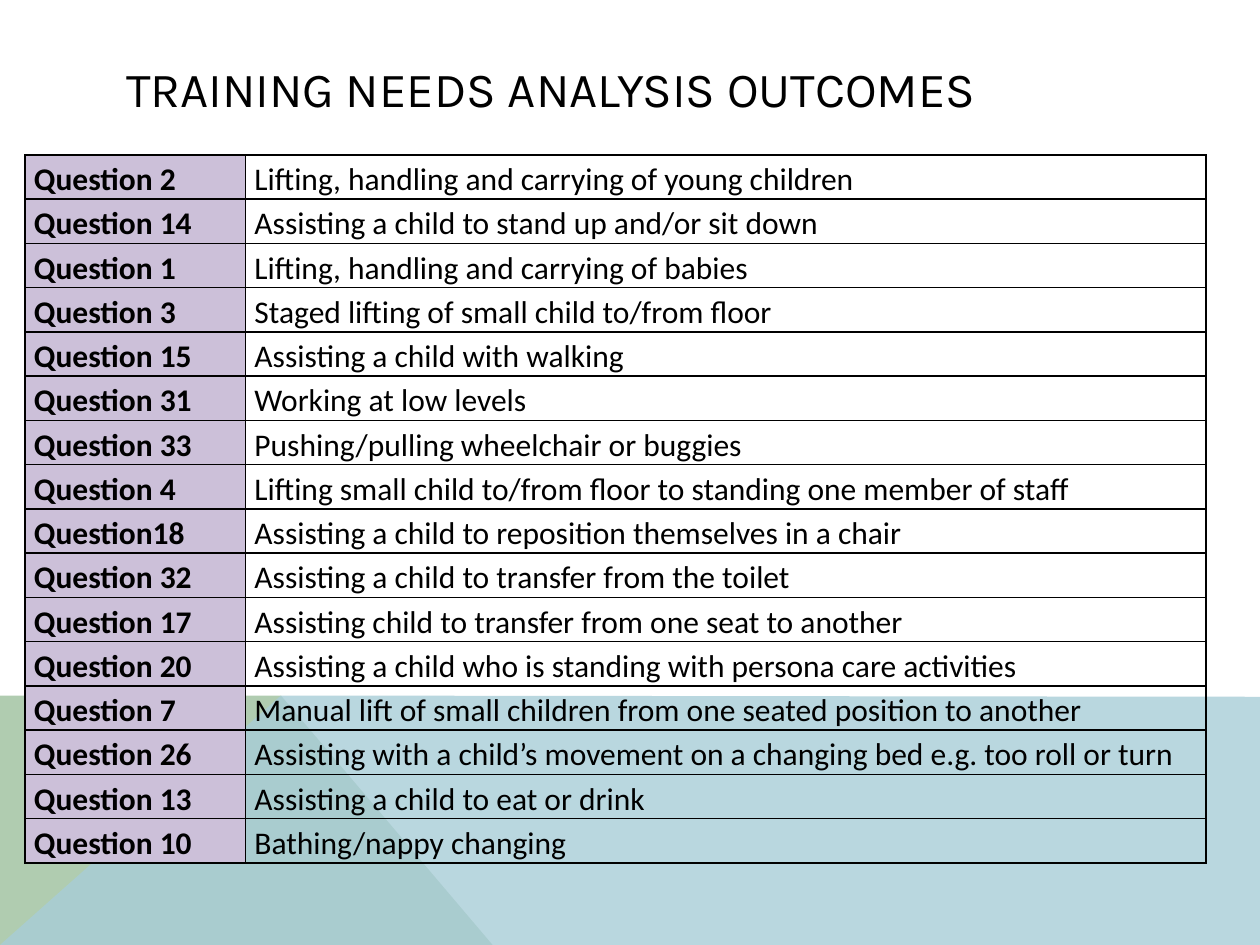
from lxml import etree
from pptx import Presentation
from pptx.dml.color import RGBColor
from pptx.enum import text
from pptx.oxml.ns import qn
from pptx.util import Inches, Pt

THEME = {
    "ink": RGBColor.from_string("000000"),
    "green": RGBColor.from_string("B0CCB0"),
    "blue": RGBColor.from_string("A8CDD7"),
    "lilac": RGBColor.from_string("CCC0D9"),
    "title_font": "Karla",
    "title_size": Pt(28),
    "table_font": "Calibri",
    "table_size": Pt(18),
}

OUTCOMES = [
    ("Question 2", "Lifting, handling and carrying of young children"),
    ("Question 14", "Assisting a child to stand up and/or sit down"),
    ("Question 1", "Lifting, handling and carrying of babies"),
    ("Question 3", "Staged lifting of small child to/from floor"),
    ("Question 15", "Assisting a child with walking"),
    ("Question 31", "Working at low levels"),
    ("Question 33", "Pushing/pulling wheelchair or buggies"),
    ("Question 4", "Lifting small child to/from floor to standing one member of staff"),
    ("Question18", "Assisting a child to reposition themselves in a chair"),
    ("Question 32", "Assisting a child to transfer from the toilet"),
    ("Question 17", "Assisting child to transfer from one seat to another"),
    ("Question 20", "Assisting a child who is standing with persona care activities"),
    ("Question 7", "Manual lift of small children from one seated position to another"),
    ("Question 26", "Assisting with a child’s movement on a changing bed e.g. too roll or turn"),
    ("Question 13", "Assisting a child to eat or drink"),
    ("Question 10", "Bathing/nappy changing"),
]


def set_all(target, values):
    for name, value in values.items():
        setattr(target, name, value)


def add_borders(cell):
    """Draw a 1 pt line on all four sides; the lines must precede the fill."""
    properties = cell._tc.get_or_add_tcPr()
    for position, side in enumerate(("a:lnL", "a:lnR", "a:lnT", "a:lnB")):
        line = etree.Element(qn(side), w=str(Pt(1)))
        fill = etree.SubElement(line, qn("a:solidFill"))
        etree.SubElement(fill, qn("a:srgbClr"), val=str(THEME["ink"]))
        properties.insert(position, line)


prs = Presentation()
set_all(prs, {"slide_width": Inches(10), "slide_height": Inches(7.5)})
slide = prs.slides.add_slide(prs.slide_layouts[5])

# Coloured bands along the foot
bands = [
    ("green", 100, [(0, 7.5), (0, 5.52), (2.23, 5.52), (3.91, 7.5)]),
    ("blue", 80, [(0, 7.5), (2.23, 5.52), (10, 5.53), (10, 7.5)]),
]
for colour, opacity, corners in bands:
    points = [(Inches(x), Inches(y)) for x, y in corners]
    outline = slide.shapes.build_freeform(*points[0])
    outline.add_line_segments(points[1:], close=True)
    band = outline.convert_to_shape()
    band.shadow.inherit = False
    band.fill.solid()
    band.fill.fore_color.rgb = THEME[colour]
    band.line.fill.background()
    if opacity < 100:
        tint = band.element.spPr.find(qn("a:solidFill"))[0]
        etree.SubElement(tint, qn("a:alpha"), val=str(opacity * 1000))

# Title, in front of the bands
title = slide.shapes.title
title.element.getparent().append(title.element)
set_all(title, {"left": Inches(0.9), "top": Inches(0.4),
                "width": Inches(8.22), "height": Inches(0.6)})
title.text_frame.text = "TRAINING NEEDS ANALYSIS OUTCOMES"
set_all(title.text_frame, {"vertical_anchor": text.MSO_ANCHOR.MIDDLE,
                           "auto_size": text.MSO_AUTO_SIZE.NONE,
                           "word_wrap": True})
heading = title.text_frame.paragraphs[0]
heading.alignment = text.PP_ALIGN.LEFT
heading_font = heading.runs[0].font
set_all(heading_font, {"name": THEME["title_font"], "size": THEME["title_size"]})
heading_font.color.rgb = THEME["ink"]

# Outcomes table
row_height = Inches(0.32)
outcomes = slide.shapes.add_table(
    len(OUTCOMES), 2, Inches(0.2), Inches(1.23),
    Inches(9.37), row_height * len(OUTCOMES)).table
set_all(outcomes, {"first_row": False, "horz_banding": False})
for column, width in zip(outcomes.columns, (1.75, 7.62)):
    column.width = Inches(width)

for row, entries in zip(outcomes.rows, OUTCOMES):
    row.height = row_height
    for index, (cell, wording) in enumerate(zip(row.cells, entries)):
        is_question = index == 0
        set_all(cell, {"text": wording,
                       "margin_left": Inches(0.07), "margin_right": Inches(0.07),
                       "margin_top": 0, "margin_bottom": 0})
        if is_question:
            cell.fill.solid()
            cell.fill.fore_color.rgb = THEME["lilac"]
        else:
            cell.fill.background()
        add_borders(cell)
        paragraph = cell.text_frame.paragraphs[0]
        paragraph.line_spacing = 1.15
        font = paragraph.runs[0].font
        set_all(font, {"name": THEME["table_font"], "size": THEME["table_size"],
                       "bold": is_question})
        font.color.rgb = THEME["ink"]

prs.save("out.pptx")
